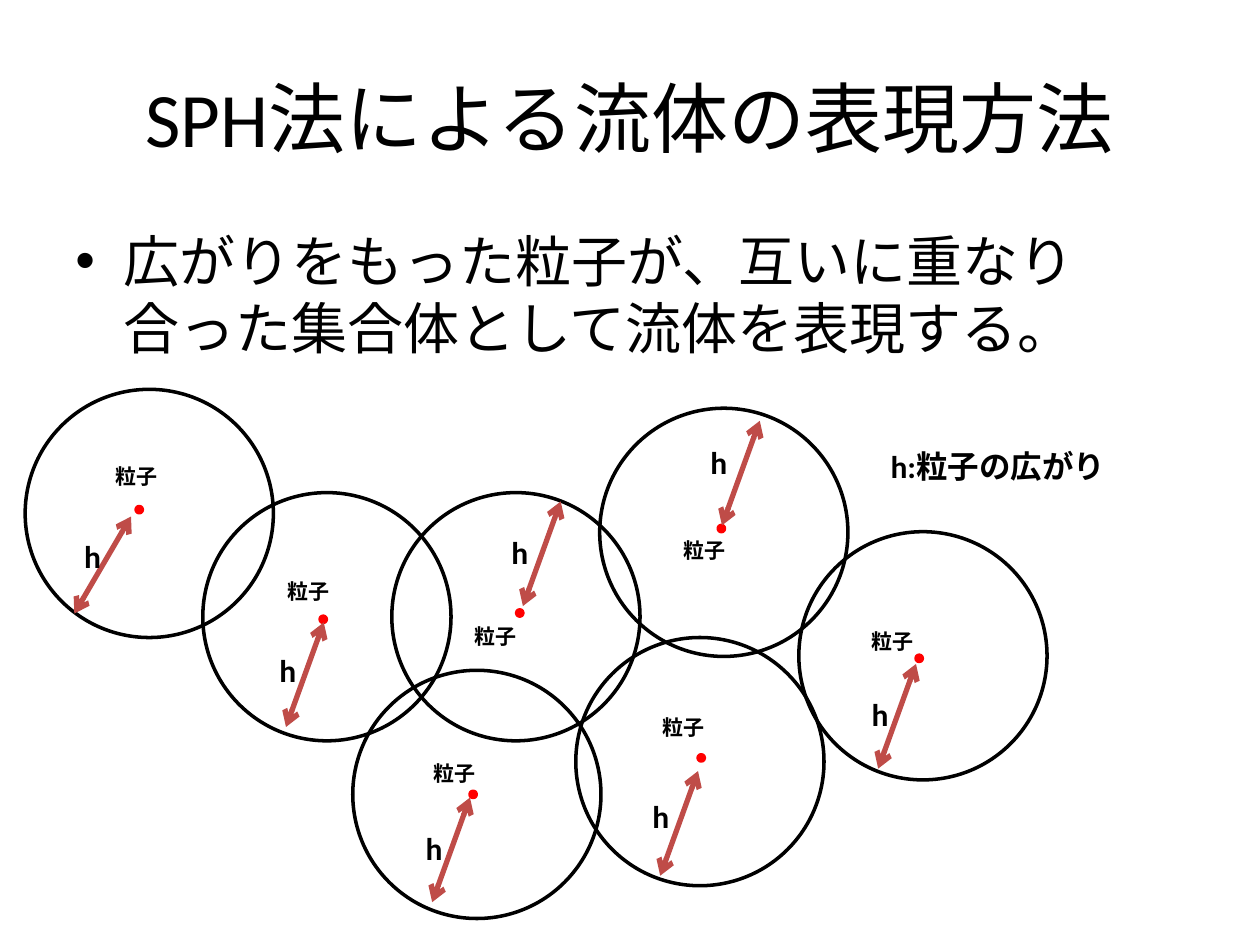
from lxml import etree
from pptx import Presentation
from pptx.dml.color import RGBColor
from pptx.enum.lang import MSO_LANGUAGE_ID
from pptx.enum.shapes import MSO_CONNECTOR, MSO_SHAPE
from pptx.enum.text import MSO_ANCHOR, PP_ALIGN
from pptx.oxml.ns import qn
from pptx.util import Inches, Pt

STRAIGHT = MSO_CONNECTOR.STRAIGHT
CIRCLE, DOT = MSO_SHAPE.OVAL, MSO_SHAPE.FLOWCHART_CONNECTOR
TOP, MIDDLE = MSO_ANCHOR.TOP, MSO_ANCHOR.MIDDLE
LEFT, CENTER = PP_ALIGN.LEFT, PP_ALIGN.CENTER
JAPANESE = MSO_LANGUAGE_ID.JAPANESE

BLACK, RED, BRICK = "000000", "FF0000", "BF4C48"
DIAMETER, DOT_SIZE = 1.97, 0.05

# Circle corner, dot corner, arrow start, arrow run, "h" corner, "粒子" corner
STEEP, SLANTED = (-0.3, 0.83), (-0.45, 0.77)
PARTICLES = [
    ((3.11, 3.91), (4.10, 4.84), (4.45, 3.98), STEEP, (3.96, 4.18), (3.67, 4.90)),
    ((1.61, 3.91), (2.54, 4.89), (2.57, 4.94), STEEP, (2.12, 5.12), (2.18, 4.54)),
    ((6.34, 4.22), (7.27, 5.20), (7.27, 5.27), STEEP, (6.82, 5.47), (6.82, 4.94)),
    ((4.57, 5.06), (5.54, 5.99), (5.54, 6.12), STEEP, (5.08, 6.28), (5.16, 5.62)),
    ((4.76, 3.24), (5.70, 4.17), (6.03, 3.34), STEEP, (5.54, 3.47), (5.33, 4.22)),
    ((2.80, 5.32), (3.73, 6.28), (3.73, 6.33), STEEP, (3.28, 6.53), (3.34, 5.99)),
    ((0.20, 3.09), (1.08, 4.02), (1.04, 4.10), SLANTED, (0.57, 4.21), (0.82, 3.63)),
]


def color(value):
    return RGBColor.from_string(value)


class SlideBuilder:
    font = "Calibri"
    outline = 2
    arrow_width = 3

    def __init__(self, page):
        self.page = page

    def text(self, corner, size, words, points, bold=False, align=LEFT, anchor=TOP):
        box = self.page.shapes.add_textbox(*map(Inches, corner + size))
        frame = box.text_frame
        frame.word_wrap = True
        frame.vertical_anchor = anchor
        para = frame.paragraphs[0]
        para.alignment = align
        span = para.add_run()
        span.text = words
        span.font.name = self.font
        span.font.size = Pt(points)
        span.font.bold = bold
        span.font.color.rgb = color(BLACK)
        span.font.language_id = JAPANESE
        return para

    def bullet(self, corner, size, words, points):
        para = self.text(corner, size, words, points)
        para.space_before = Pt(points * 0.2)
        props = para._p.get_or_add_pPr()
        props.set("marL", str(Inches(0.38)))
        props.set("indent", str(-Inches(0.38)))
        etree.SubElement(props, qn("a:buFont"), typeface="Arial")
        etree.SubElement(props, qn("a:buChar"), char="•")

    def round_shape(self, kind, corner, diameter, line, fill=None):
        shape = self.page.shapes.add_shape(
            kind, *map(Inches, corner + (diameter, diameter)))
        shape.shadow.inherit = False
        if fill:
            shape.fill.solid()
            shape.fill.fore_color.rgb = color(fill)
        else:
            shape.fill.background()
        shape.line.color.rgb = color(line)
        shape.line.width = Pt(self.outline)

    def double_arrow(self, start, run):
        end = (start[0] + run[0], start[1] + run[1])
        arrow = self.page.shapes.add_connector(STRAIGHT, *map(Inches, start + end))
        arrow.line.color.rgb = color(BRICK)
        arrow.line.width = Pt(self.arrow_width)
        line = arrow.line._get_or_add_ln()
        for tip in ("a:headEnd", "a:tailEnd"):
            etree.SubElement(line, qn(tip), type="arrow")
        etree.SubElement(arrow._element.spPr, qn("a:effectLst"))


def main():
    deck = Presentation()
    deck.slide_width, deck.slide_height = Inches(10), Inches(7.5)
    slide = SlideBuilder(deck.slides.add_slide(deck.slide_layouts[6]))

    slide.text((0.5, 0.3), (9, 1.25), "SPH法による流体の表現方法", 44,
               align=CENTER, anchor=MIDDLE)
    slide.bullet((0.5, 1.75), (9, 4.95),
                 "広がりをもった粒子が、互いに重なり合った集合体として流体を表現する。", 32)

    for circle, dot, start, run, radius_label, name_label in PARTICLES:
        slide.round_shape(CIRCLE, circle, DIAMETER, BLACK)
        slide.round_shape(DOT, dot, DOT_SIZE, RED, RED)
        slide.double_arrow(start, run)
        slide.text(radius_label, (0.6, 0.4), "h", 18, bold=True)
        slide.text(name_label, (0.78, 0.3), "粒子", 12, bold=True)

    slide.text((6.97, 3.5), (2.28, 0.4), "h:粒子の広がり", 18, bold=True)
    deck.save("out.pptx")


if __name__ == "__main__":
    main()
